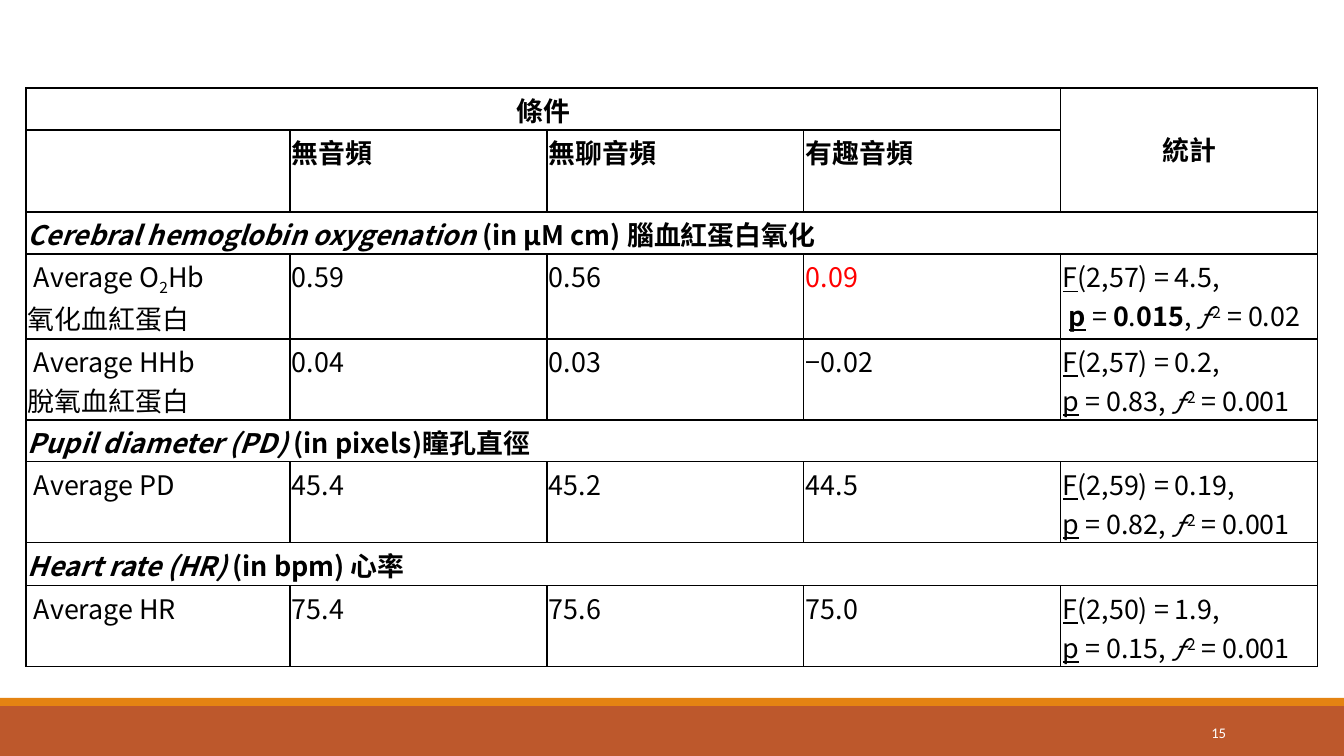
from typing import NamedTuple

from lxml import etree
from pptx import Presentation, util as u
from pptx.dml.color import RGBColor
from pptx.enum import shapes, text
from pptx.oxml import ns

COLORS = {"ink": "000000", "alert": "FF0000", "paper": "FFFFFF",
          "footer": "BD582C", "stripe": "E48312"}
TABLE_FONT = "Noto Sans CJK SC"
PAGE_FONT = "Calibri"
COLUMN_WIDTHS = [264, 257, 257, 257, 257]
ROW_HEIGHTS = [42, 82, 42, 85, 81, 42, 81, 43, 81]


class Run(NamedTuple):
    text: str
    style: dict = {}
    color: str = "ink"
    baseline: int = 0
    font: str = TABLE_FONT


class Entry(NamedTuple):
    """One table cell with its paragraphs, spans and layout."""
    row: int
    column: int
    lines: list[list[Run]]
    rows: int = 1
    columns: int = 1
    side_margin: int = 2
    layout: dict = {}


class Bar(NamedTuple):
    top: int
    height: int
    color: str


BOLD = {"bold": True}
ITALIC = {"italic": True}
UNDERLINE = {"underline": True}
CENTER = {"alignment": text.PP_ALIGN.CENTER}
BARS = [Bar(706, 50, "footer"), Bar(698, 8, "stripe")]


def px(length: int) -> u.Emu:
    return u.Emu(round(length * 914400 / 100.8))


def apply(target: object, values: dict) -> None:
    for name, value in values.items():
        setattr(target, name, value)


def add_run(paragraph, run: Run, size: float) -> None:
    part = paragraph.add_run()
    part.text = run.text
    apply(part.font, {"name": run.font, "size": u.Pt(size), **run.style})
    part.font.color.rgb = RGBColor.from_string(COLORS[run.color])
    properties = part.font._element
    if run.baseline:
        properties.set("baseline", str(run.baseline * 1000))
    latin = properties.find(ns.qn("a:latin"))
    east_asian = etree.Element(ns.qn("a:ea"), typeface=TABLE_FONT)
    latin.addnext(east_asian)


def set_borders(cell) -> None:
    properties = cell._tc.get_or_add_tcPr()
    for side in ("lnL", "lnR", "lnT", "lnB"):
        line = etree.SubElement(properties, ns.qn(f"a:{side}"), w=str(u.Pt(1)))
        fill = etree.SubElement(line, ns.qn("a:solidFill"))
        etree.SubElement(fill, ns.qn("a:srgbClr"), val=COLORS["ink"])


def f_test(degrees: str, f_value: str, p_value: list[Run], effect: str) -> list[list[Run]]:
    """Two lines: the F value, then the p value and the effect size."""
    return [
        [Run("F", UNDERLINE), Run(f"({degrees}) = {f_value},")],
        [*p_value, Run(", "), Run("ƒ", ITALIC), Run("2", baseline=30), Run(f" = {effect}")],
    ]


def plain_p(value: str) -> list[Run]:
    return [Run("p", UNDERLINE), Run(f" = {value}")]


def section(row: int, measure: str, detail: str) -> Entry:
    return Entry(row, 0, [[Run(measure, BOLD | ITALIC), Run(detail, BOLD)]], columns=5)


def measurements(row: int, label: list[list[Run]], means: list[Run],
                 statistic: list[list[Run]]) -> list[Entry]:
    contents = [label, *([[mean]] for mean in means), statistic]
    return [Entry(row, column, lines) for column, lines in enumerate(contents)]


SIGNIFICANT_P = [Run(" "), Run("p", BOLD | UNDERLINE), Run(" = "),
                 Run("0", BOLD), Run("."), Run("015", BOLD)]
CONDITIONS = ["無音頻", "無聊音頻", "有趣音頻"]

ENTRIES = [
    Entry(0, 0, [[Run("條件", BOLD)]], columns=4, layout=CENTER),
    Entry(0, 4, [[Run("統計", BOLD)]], rows=2, side_margin=4,
          layout=CENTER | {"line_spacing": 2.0}),
    *(Entry(1, column, [[Run(name, BOLD)]]) for column, name in enumerate(CONDITIONS, 1)),
    section(2, "Cerebral hemoglobin oxygenation", " (in μM cm) 腦血紅蛋白氧化"),
    *measurements(3, [[Run(" Average O"), Run("2", baseline=-25), Run("Hb")],
                      [Run("氧化血紅蛋白", font=PAGE_FONT)]],
                  [Run("0.59"), Run("0.56"), Run("0.09", color="alert")],
                  f_test("2,57", "4.5", SIGNIFICANT_P, "0.02")),
    *measurements(4, [[Run(" Average HHb")], [Run("脫氧血紅蛋白")]],
                  [Run("0.04"), Run("0.03"), Run("−0.02")],
                  f_test("2,57", "0.2", plain_p("0.83"), "0.001")),
    section(5, "Pupil diameter (PD)", " (in pixels)瞳孔直徑"),
    *measurements(6, [[Run(" Average PD")]],
                  [Run("45.4"), Run("45.2"), Run("44.5")],
                  f_test("2,59", "0.19", plain_p("0.82"), "0.001")),
    section(7, "Heart rate (HR)", " (in bpm) 心率"),
    *measurements(8, [[Run(" Average HR")]],
                  [Run("75.4"), Run("75.6"), Run("75.0")],
                  f_test("2,50", "1.9", plain_p("0.15"), "0.001")),
]


def add_bar(slide, bar: Bar) -> None:
    strip = slide.shapes.add_shape(shapes.MSO_SHAPE.RECTANGLE, 0, px(bar.top),
                                   px(1344), px(bar.height))
    strip.shadow.inherit = False
    strip.fill.solid()
    strip.fill.fore_color.rgb = RGBColor.from_string(COLORS[bar.color])
    strip.line.fill.background()


def add_page_number(slide, number: str) -> None:
    frame = slide.shapes.add_textbox(px(1092), px(713), px(144), px(40)).text_frame
    apply(frame, {"word_wrap": True, "vertical_anchor": text.MSO_ANCHOR.MIDDLE})
    paragraph = frame.paragraphs[0]
    paragraph.alignment = text.PP_ALIGN.RIGHT
    add_run(paragraph, Run(number, color="paper", font=PAGE_FONT), 10.5)


def fill_entry(table, entry: Entry) -> None:
    cell = table.cell(entry.row, entry.column)
    if entry.rows > 1 or entry.columns > 1:
        cell.merge(table.cell(entry.row + entry.rows - 1, entry.column + entry.columns - 1))
    apply(cell, {"margin_left": px(entry.side_margin), "margin_right": px(entry.side_margin)})
    for index, line in enumerate(entry.lines):
        frame = cell.text_frame
        paragraph = frame.add_paragraph() if index else frame.paragraphs[0]
        apply(paragraph, entry.layout)
        for run in line:
            add_run(paragraph, run, 19.2)


def add_results(slide) -> None:
    table = slide.shapes.add_table(
        len(ROW_HEIGHTS), len(COLUMN_WIDTHS), px(26), px(88),
        px(sum(COLUMN_WIDTHS)), px(sum(ROW_HEIGHTS))).table
    apply(table, {"first_row": False, "horz_banding": False})
    for column, width in zip(table.columns, COLUMN_WIDTHS):
        column.width = px(width)
    for row, height in zip(table.rows, ROW_HEIGHTS):
        row.height = px(height)
    for cell in table.iter_cells():
        apply(cell, {f"margin_{side}": px(2) for side in ("left", "right", "top", "bottom")})
        set_borders(cell)
        cell.fill.background()
    for entry in ENTRIES:
        fill_entry(table, entry)


def main() -> None:
    deck = Presentation()
    apply(deck, {"slide_width": px(1344), "slide_height": px(756)})
    slide = deck.slides.add_slide(deck.slide_layouts[6])
    for bar in BARS:
        add_bar(slide, bar)
    add_page_number(slide, "15")
    add_results(slide)
    deck.save("out.pptx")


if __name__ == "__main__":
    main()
